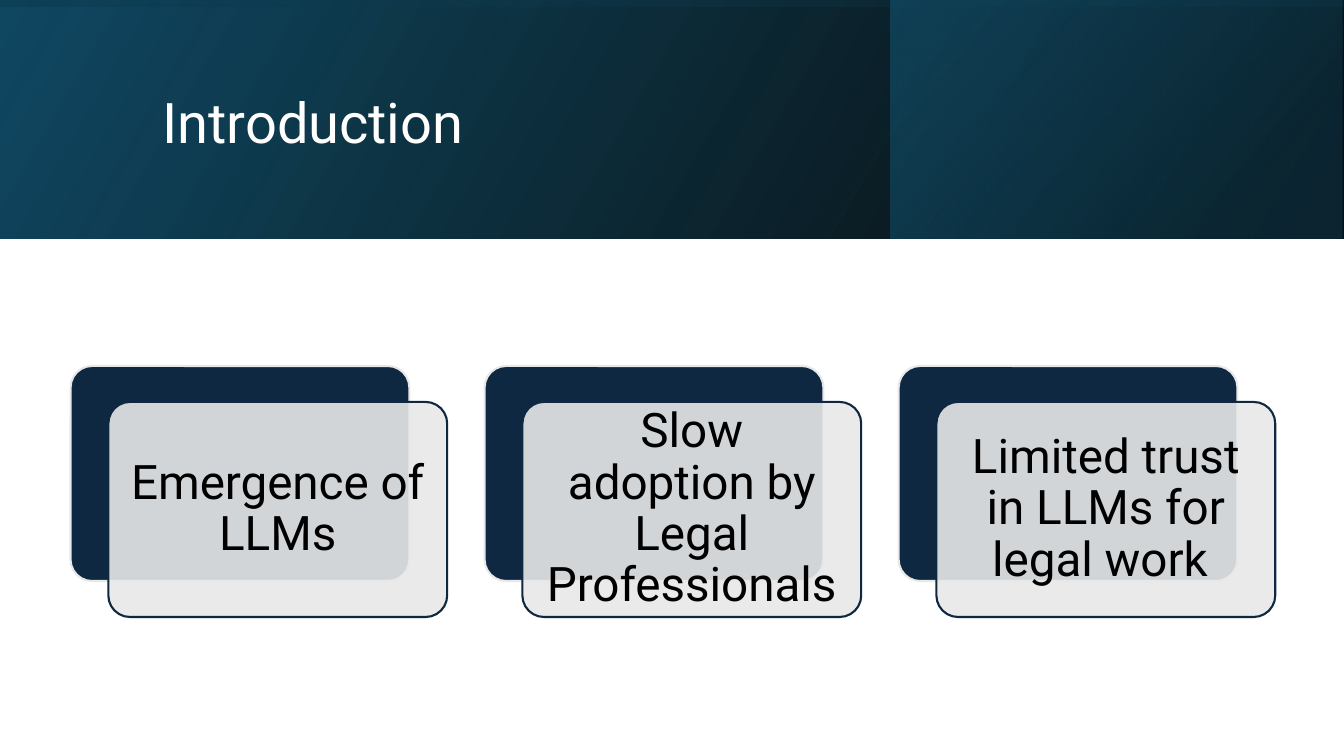
from dataclasses import dataclass

from lxml import etree
from pptx import Presentation
from pptx.dml.color import RGBColor
from pptx.enum.shapes import MSO_SHAPE
from pptx.enum.text import MSO_ANCHOR, MSO_AUTO_SIZE, PP_ALIGN
from pptx.oxml.ns import qn
from pptx.util import Pt

RECT = MSO_SHAPE.RECTANGLE
ROUNDED = MSO_SHAPE.ROUNDED_RECTANGLE
MIDDLE = MSO_ANCHOR.MIDDLE
LEFT, CENTER = PP_ALIGN.LEFT, PP_ALIGN.CENTER
NO_AUTOFIT = MSO_AUTO_SIZE.NONE

# Content
HEADING = "Introduction"
POINTS = [
    "Emergence of LLMs",
    "Slow adoption by Legal Professionals ",
    "Limited trust in LLMs for legal work ",
]


@dataclass(frozen=True)
class Theme:
    font: str = "Roboto"
    title_size: int = 40
    card_size: int = 34
    white: str = "FFFFFF"
    black: str = "000000"
    navy: str = "0E2841"
    pale: str = "E8E8E8"
    teal: str = "156082"
    mid_teal: str = "104862"
    deep_teal: str = "0B3041"


THEME = Theme()

# Layout, in points
SLIDE_W, SLIDE_H = 960, 540
BAND_H = 170.6
TITLE_BOX = (108.8, 27.4, 765.4, 123.8)
CARD_W, CARD_H = 242, 153.6
CARD_LEFT, CARD_TOP, CARD_PITCH = 50.4, 261.4, 295.75
FRONT_DX, FRONT_DY = 27, 25.7
CARD_INSET = 10

# Header layers: box, rotation, clockwise gradient angle,
# stops as (position, colour, opacity in percent)
HEADER_LAYERS = [
    ((0, 0, SLIDE_W, BAND_H), 0, 330,
     [(0, THEME.black, 96), (1, THEME.mid_teal, 100)]),
    ((636.2, 0, 322.9, BAND_H), 0, 320,
     [(0.19, THEME.deep_teal, 68), (1, THEME.teal, 48)]),
    (((SLIDE_W - BAND_H) / 2, (BAND_H - SLIDE_W) / 2, BAND_H, SLIDE_W), 270, 350,
     [(0.23, THEME.mid_teal, 16), (0.99, THEME.black, 45)]),
]


def rgb(code):
    return RGBColor.from_string(code)


def add_panel(slide, kind, box):
    panel = slide.shapes.add_shape(kind, *map(Pt, box))
    panel.shadow.inherit = False
    return panel


def set_opacity(color_element, percent):
    if percent < 100:
        alpha = etree.SubElement(color_element, qn("a:alpha"))
        alpha.set("val", str(percent * 1000))


def write_text(shape, text, *, size, color, align, inset=None):
    frame = shape.text_frame
    frame.word_wrap = True
    frame.auto_size = NO_AUTOFIT
    frame.vertical_anchor = MIDDLE
    if inset is not None:
        frame.margin_left = frame.margin_right = Pt(inset)
        frame.margin_top = frame.margin_bottom = Pt(inset)
    paragraph = frame.paragraphs[0]
    paragraph.alignment = align
    paragraph.line_spacing = 0.9
    run = paragraph.add_run()
    run.text = text
    run.font.name = THEME.font
    run.font.size = Pt(size)
    run.font.color.rgb = rgb(color)


def add_header_layer(slide, box, rotation, angle, stops):
    """Add a mirrored, two-stop translucent gradient rectangle."""
    layer = add_panel(slide, RECT, box)
    layer.rotation = rotation
    layer.line.fill.background()
    properties = layer._element.spPr
    properties.find(qn("a:xfrm")).set("flipH", "1")
    layer.fill.gradient()
    layer.fill.gradient_angle = 360 - angle
    for stop, (position, color, _) in zip(layer.fill.gradient_stops, stops):
        stop.position = position
        stop.color.rgb = rgb(color)
    for element, (_, _, opacity) in zip(properties.iter(qn("a:srgbClr")), stops):
        set_opacity(element, opacity)


def add_card_layer(slide, left, top, fill, line, opacity=100):
    layer = add_panel(slide, ROUNDED, (left, top, CARD_W, CARD_H))
    layer.adjustments[0] = 0.1
    layer.fill.solid()
    layer.fill.fore_color.rgb = rgb(fill)
    set_opacity(layer._element.spPr.find(qn("a:solidFill"))[0], opacity)
    layer.line.color.rgb = rgb(line)
    layer.line.width = Pt(1.5)
    return layer


def add_title(slide):
    title = slide.shapes.title
    title.left, title.top, title.width, title.height = map(Pt, TITLE_BOX)
    write_text(title, HEADING, size=THEME.title_size, color=THEME.white, align=LEFT)
    # Bring the title in front of the header layers
    slide.shapes._spTree.append(title._element)


def add_card(slide, index, text):
    left = CARD_LEFT + index * CARD_PITCH
    add_card_layer(slide, left, CARD_TOP, THEME.navy, THEME.pale)
    front = add_card_layer(slide, left + FRONT_DX, CARD_TOP + FRONT_DY,
                           THEME.pale, THEME.navy, opacity=90)
    write_text(front, text, size=THEME.card_size, color=THEME.black,
               align=CENTER, inset=CARD_INSET)


def main():
    deck = Presentation()
    deck.slide_width, deck.slide_height = Pt(SLIDE_W), Pt(SLIDE_H)
    slide = deck.slides.add_slide(deck.slide_layouts[5])
    for layer in HEADER_LAYERS:
        add_header_layer(slide, *layer)
    add_title(slide)
    for index, text in enumerate(POINTS):
        add_card(slide, index, text)
    deck.save("out.pptx")


if __name__ == "__main__":
    main()
